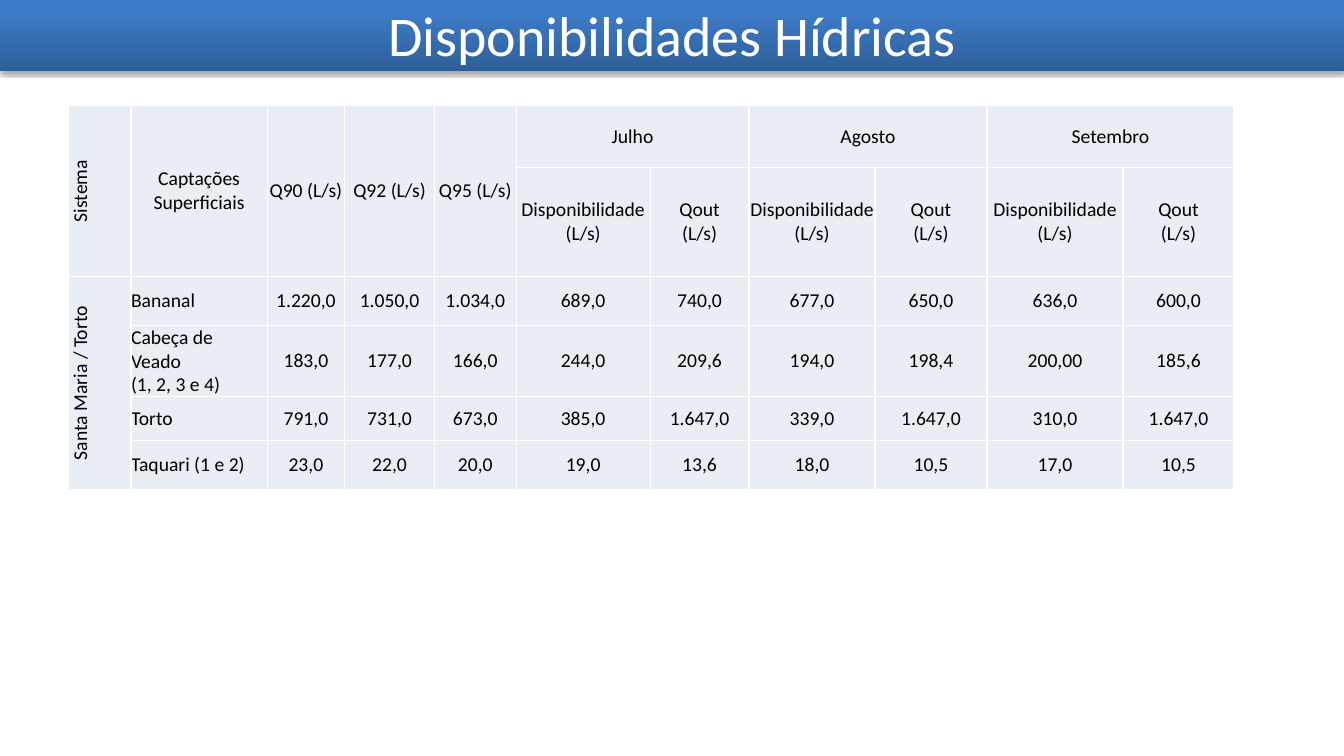
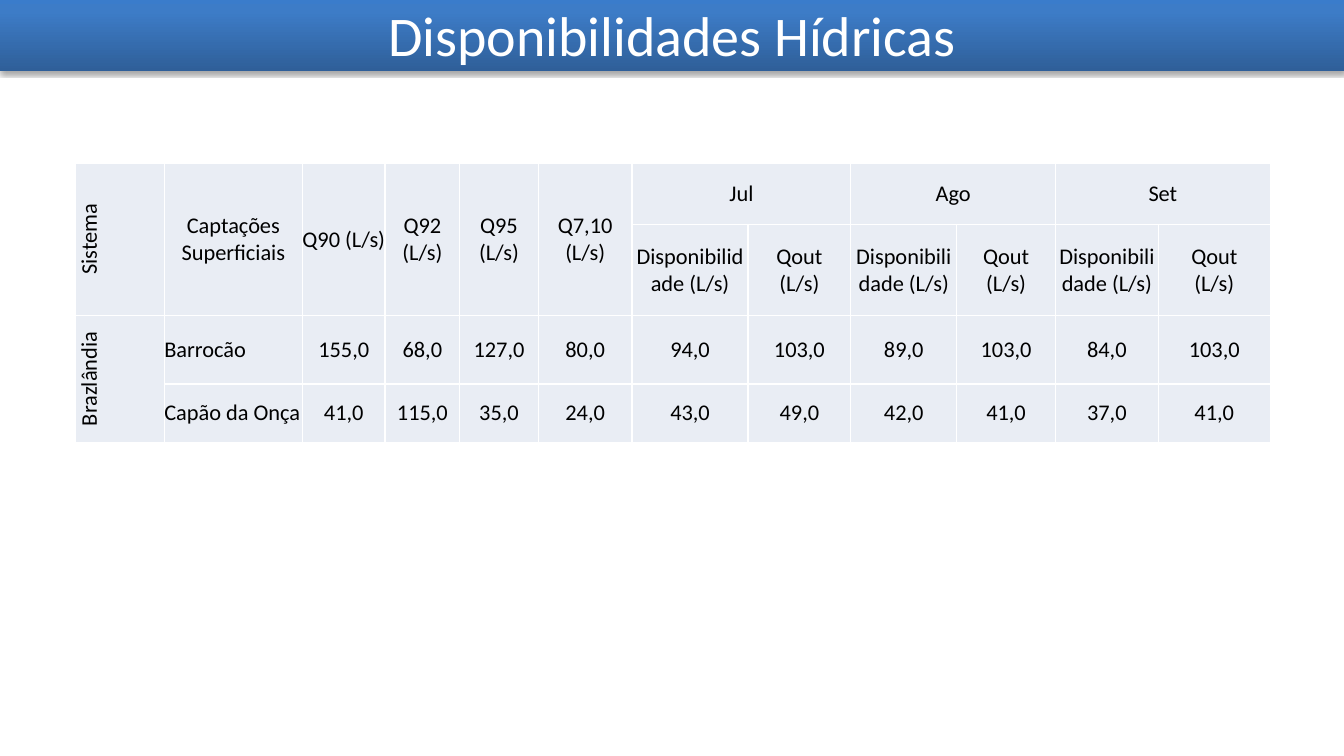
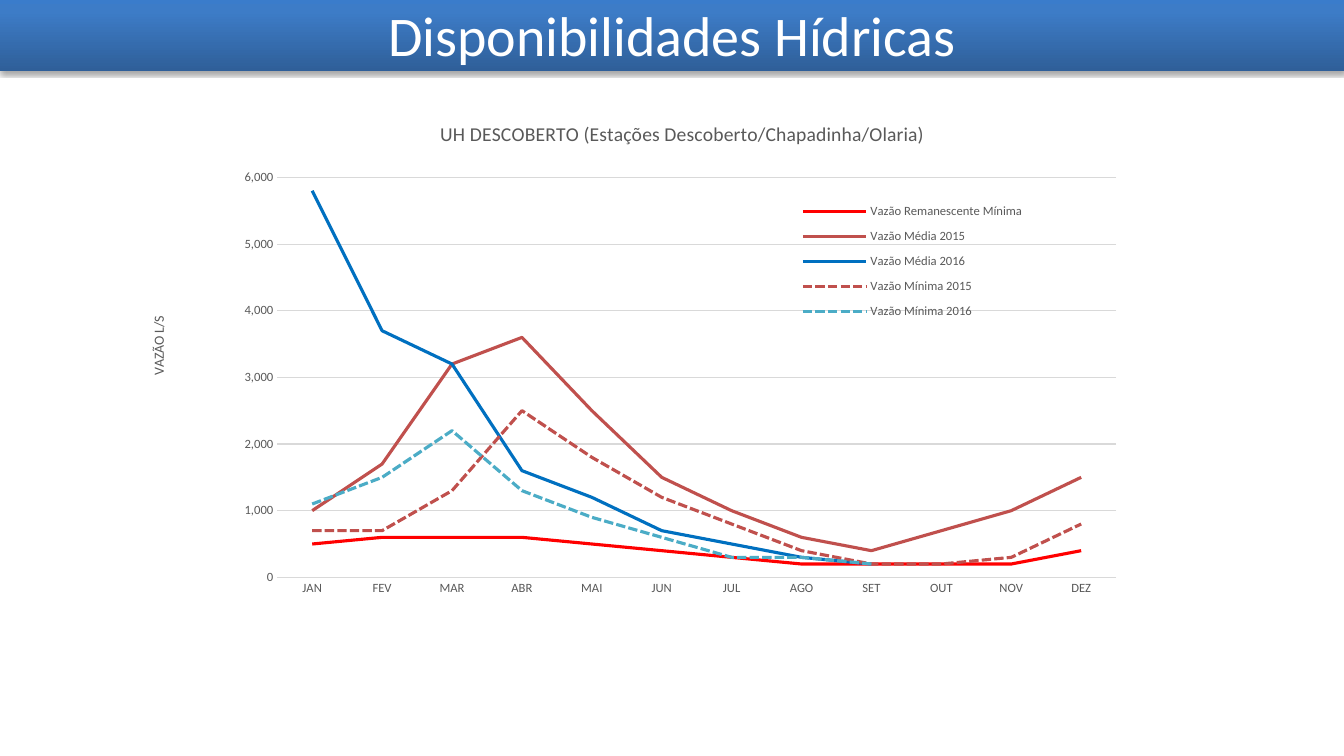
from dataclasses import dataclass

from lxml import etree
from pptx import Presentation
from pptx.chart.data import CategoryChartData
from pptx.dml.color import RGBColor
from pptx.enum.chart import XL_CHART_TYPE, XL_LEGEND_POSITION, XL_TICK_MARK
from pptx.enum.dml import MSO_LINE
from pptx.enum.text import MSO_ANCHOR, MSO_AUTO_SIZE, PP_ALIGN
from pptx.oxml import parse_xml
from pptx.oxml.ns import nsdecls, qn
from pptx.util import Inches, Pt

LEFT, CENTER = PP_ALIGN.LEFT, PP_ALIGN.CENTER
MIDDLE = MSO_ANCHOR.MIDDLE
GROW = MSO_AUTO_SIZE.SHAPE_TO_FIT_TEXT
LINE = XL_CHART_TYPE.LINE
RIGHT = XL_LEGEND_POSITION.RIGHT
NO_TICK = XL_TICK_MARK.NONE
SOLID, DASH = MSO_LINE.SOLID, MSO_LINE.SQUARE_DOT
TITLE_ONLY = 5


@dataclass(frozen=True)
class Theme:
    font: str = "Calibri"
    white: str = "FFFFFF"
    black: str = "000000"
    cell: str = "E9EDF4"
    gray: str = "595959"
    grid: str = "D9D9D9"
    band: tuple = ((0, "2F5F99"), (80, "3D7CC7"), (100, "3A7CCB"))
    red: str = "FF0000"
    brick: str = "C0504D"
    blue: str = "0070C0"
    aqua: str = "4BACC6"
    title: int = 40
    chart: int = 14
    axis: int = 10
    label: int = 9


THEME = Theme()
WIDTH, HEIGHT = 13.33, 7.5
TITLE = "Disponibilidades Hídricas"
DISP, QOUT = "Disponibilidade (L/s)", "Qout\v(L/s)"

NORTH = [
    ["Santa Maria / Torto", "Bananal", "1.220,0", "1.050,0", "1.034,0",
     "689,0", "740,0", "677,0", "650,0", "636,0", "600,0"],
    [None, "Cabeça de Veado\v(1, 2, 3 e 4)", "183,0", "177,0", "166,0",
     "244,0", "209,6", "194,0", "198,4", "200,00", "185,6"],
    [None, "Torto", "791,0", "731,0", "673,0",
     "385,0", "1.647,0", "339,0", "1.647,0", "310,0", "1.647,0"],
    [None, "Taquari (1 e 2)", "23,0", "22,0", "20,0",
     "19,0", "13,6", "18,0", "10,5", "17,0", "10,5"],
]
WEST = [
    ["Brazlândia", "Barrocão", "155,0", "68,0", "127,0", "80,0",
     "94,0", "103,0", "89,0", "103,0", "84,0", "103,0"],
    [None, "Capão da Onça", "41,0", "115,0", "35,0", "24,0",
     "43,0", "49,0", "42,0", "41,0", "37,0", "41,0"],
]
MONTHS = "JAN FEV MAR ABR MAI JUN JUL AGO SET OUT NOV DEZ".split()
FLOWS = [
    ("Vazão Remanescente Mínima", THEME.red, SOLID,
     [500, 600, 600, 600, 500, 400, 300, 200, 200, 200, 200, 400]),
    ("Vazão Média 2015", THEME.brick, SOLID,
     [1000, 1700, 3200, 3600, 2500, 1500, 1000, 600, 400, 700, 1000, 1500]),
    ("Vazão Média 2016", THEME.blue, SOLID,
     [5800, 3700, 3200, 1600, 1200, 700, 500, 300, 200, None, None, None]),
    ("Vazão Mínima 2015", THEME.brick, DASH,
     [700, 700, 1300, 2500, 1800, 1200, 800, 400, 200, 200, 300, 800]),
    ("Vazão Mínima 2016", THEME.aqua, DASH,
     [1100, 1500, 2200, 1300, 900, 600, 300, 300, 200, None, None, None]),
]


def style(font, size, color):
    font.name = THEME.font
    font.size = Pt(size)
    font.bold = False
    font.color.rgb = RGBColor.from_string(color)


def write(frame, text, size, color, align=CENTER):
    frame.text = text
    for para in frame.paragraphs:
        para.alignment = align
        style(para.font, size, color)


def add_slide(deck):
    """Add a slide with the shaded title band."""
    slide = deck.slides.add_slide(deck.slide_layouts[TITLE_ONLY])
    band = slide.shapes.title
    band.left, band.top = Inches(0), Inches(0)
    band.width, band.height = Inches(WIDTH), Inches(0.67)
    stops = "".join(
        f'<a:gs pos="{pos * 1000}"><a:srgbClr val="{color}"/></a:gs>'
        for pos, color in THEME.band)
    props = band.element.spPr
    props.append(parse_xml(
        f'<a:gradFill {nsdecls("a")}><a:gsLst>{stops}</a:gsLst>'
        '<a:lin ang="16200000" scaled="0"/></a:gradFill>'))
    props.append(parse_xml(
        f'<a:effectLst {nsdecls("a")}>'
        f'<a:outerShdw blurRad="{Pt(3.1)}" dist="{Pt(1.8)}" dir="5400000" '
        f'rotWithShape="0"><a:srgbClr val="{THEME.black}">'
        '<a:alpha val="35000"/></a:srgbClr></a:outerShdw></a:effectLst>'))
    frame = band.text_frame
    frame.margin_left = frame.margin_right = Inches(0)
    frame.margin_top = frame.margin_bottom = Inches(0)
    frame.auto_size = GROW
    write(frame, TITLE, THEME.title, THEME.white)
    return slide


def dress(cell):
    """Give a cell its fill, white borders and zero margins."""
    cell.fill.solid()
    cell.fill.fore_color.rgb = RGBColor.from_string(THEME.cell)
    cell.vertical_anchor = MIDDLE
    cell.margin_left = cell.margin_right = Inches(0)
    cell.margin_top = cell.margin_bottom = Inches(0)
    props = cell._tc.get_or_add_tcPr()
    for spot, side in enumerate("LRTB"):
        props.insert(spot, parse_xml(
            f'<a:ln{side} {nsdecls("a")} w="{Pt(1)}"><a:solidFill>'
            f'<a:srgbClr val="{THEME.white}"/></a:solidFill></a:ln{side}>'))


def add_grid(slide, left, top, cols, rows, flows, months, body, size):
    """Add a table with a two-row head and one system down the side."""
    head = ["Sistema", "Captações Superficiais"]
    head += [f"{flow} (L/s)" for flow in flows]
    first = len(head)
    upper = head + [text for month in months for text in (month, None)]
    lower = [None] * first + [DISP, QOUT] * len(months)
    data = [upper, lower] + body

    table = slide.shapes.add_table(
        len(rows), len(cols), Inches(left), Inches(top),
        Inches(sum(cols)), Inches(sum(rows))).table
    table.first_row = table.horz_banding = False
    for col, width in zip(table.columns, cols):
        col.width = Inches(width)
    for row, height in zip(table.rows, rows):
        row.height = Inches(height)

    for y, line in enumerate(data):
        for x, text in enumerate(line):
            cell = table.cell(y, x)
            dress(cell)
            if text is None:
                continue
            align = LEFT if x == 1 and y > 1 else CENTER
            write(cell.text_frame, text, size, THEME.black, align)
            if x == 0:
                cell._tc.get_or_add_tcPr().set("vert", "vert270")

    for x in range(first):
        table.cell(0, x).merge(table.cell(1, x))
    for x in range(first, len(cols), 2):
        table.cell(0, x).merge(table.cell(0, x + 1))
    table.cell(2, 0).merge(table.cell(len(rows) - 1, 0))


def place(part, inner=False, **box):
    """Set a chart part's place as fractions of the chart."""
    for old in part.findall(qn("c:layout")):
        part.remove(old)
    layout = etree.Element(qn("c:layout"))
    manual = etree.SubElement(layout, qn("c:manualLayout"))
    marks = {"layoutTarget": "inner"} if inner else {}
    marks.update(xMode="edge", yMode="edge", **box)
    for name, value in marks.items():
        etree.SubElement(manual, qn(f"c:{name}")).set("val", str(value))
    after = part.find(qn("c:overlay"))
    part.insert(0 if after is None else part.index(after), layout)


def rule(line, color, width):
    line.color.rgb = RGBColor.from_string(color)
    line.width = Pt(width)


def add_plot(slide):
    data = CategoryChartData(number_format="#,##0")
    data.categories = MONTHS
    for name, _, _, values in FLOWS:
        data.add_series(name, values)
    chart = slide.shapes.add_chart(
        LINE, Inches(1.15), Inches(1), Inches(10.26), Inches(5.14), data).chart
    style(chart.font, THEME.axis, THEME.black)
    chart.plots[0].vary_by_categories = False
    for series, (_, color, dash, _) in zip(chart.plots[0].series, FLOWS):
        series.smooth = False
        rule(series.format.line, color, 2.25)
        series.format.line.dash_style = dash

    months, scale = chart.category_axis, chart.value_axis
    for axis in (months, scale):
        axis.major_tick_mark = axis.minor_tick_mark = NO_TICK
        style(axis.tick_labels.font, THEME.label, THEME.gray)
    rule(months.format.line, THEME.grid, 0.75)
    scale.format.line.fill.background()
    rule(scale.major_gridlines.format.line, THEME.grid, 0.75)
    scale.minimum_scale, scale.maximum_scale = 0, 6000
    scale.major_unit = 1000
    scale.tick_labels.number_format = "#,##0"
    scale.tick_labels.number_format_is_linked = False

    title, unit = chart.chart_title, scale.axis_title
    write(title.text_frame,
          "UH DESCOBERTO (Estações Descoberto/Chapadinha/Olaria)",
          THEME.chart, THEME.gray)
    write(unit.text_frame, "VAZÃO L/S", THEME.axis, THEME.gray)
    turn = unit.text_frame._txBody.bodyPr
    turn.set("rot", "-5400000")
    turn.set("vert", "horz")

    chart.has_legend = True
    legend = chart.legend
    legend.position = RIGHT
    legend.include_in_layout = False
    style(legend.font, THEME.label, THEME.gray)

    place(title._element, x=0.31, y=0.03)
    place(unit._element, x=0.03, y=0.41)
    place(legend._element, x=0.65, y=0.18, w=0.24, h=0.26)
    place(chart._chartSpace.chart.plotArea, inner=True,
          x=0.156, y=0.148, w=0.811, h=0.772)


def main():
    deck = Presentation()
    deck.slide_width, deck.slide_height = Inches(WIDTH), Inches(HEIGHT)
    add_grid(
        add_slide(deck), 0.68, 1.05,
        [0.62, 1.35, 0.77, 0.89, 0.81, 1.33, 0.98, 1.25, 1.11, 1.35, 1.1],
        [0.61, 1.08, 0.49, 0.44, 0.44, 0.49],
        ["Q90", "Q92", "Q95"], ["Julho", "Agosto", "Setembro"], NORTH, 14)
    add_grid(
        add_slide(deck), 0.75, 1.62,
        [0.88, 1.37, 0.82, 0.74, 0.78, 0.93,
         1.15, 1.02, 1.05, 0.98, 1.02, 1.11],
        [0.61, 0.9, 0.68, 0.58],
        ["Q90", "Q92", "Q95", "Q7,10"], ["Jul", "Ago", "Set"], WEST, 16)
    add_plot(add_slide(deck))
    deck.save("out.pptx")


if __name__ == "__main__":
    main()
